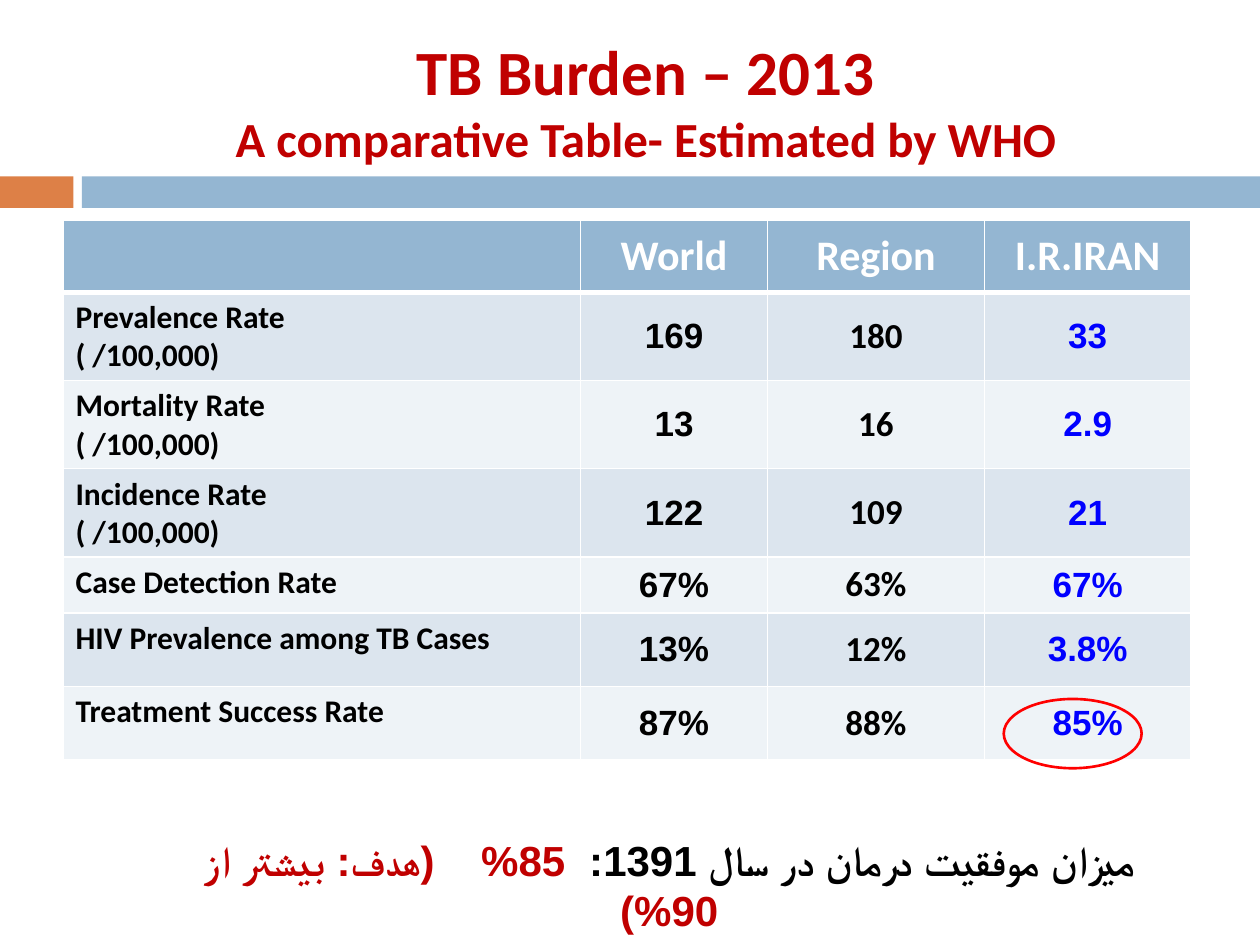
from dataclasses import dataclass

from pptx import Presentation
from pptx import util as u
from pptx.dml import color
from pptx.enum import shapes, text
from pptx.oxml import ns, xmlchemy

Pt = u.Pt
CENTER = text.PP_ALIGN.CENTER
LEFT = text.PP_ALIGN.LEFT
MIDDLE = text.MSO_ANCHOR.MIDDLE
TOP = text.MSO_ANCHOR.TOP


@dataclass(frozen=True)
class Theme:
    blue: str = "94B6D2"
    orange: str = "DD8047"
    red: str = "C00000"
    mark: str = "FF0000"
    highlight: str = "0000FF"
    black: str = "000000"
    white: str = "FFFFFF"
    bands: tuple = ("DCE5EE", "EEF3F7")
    heading_font: str = "Calibri"
    figure_font: str = "Arial"
    title: int = 36
    subtitle: int = 28
    header: int = 24
    figure: int = 20
    label: int = 18


class SlideBuilder:
    def __init__(self, slide, theme):
        self.slide = slide
        self.theme = theme

    def rgb(self, value):
        return color.RGBColor.from_string(value)

    def run(self, paragraph, words, font, size, ink, spacing=0):
        run = paragraph.add_run()
        run.text = words
        run.font.name = font
        run.font.size = Pt(size)
        run.font.bold = True
        run.font.color.rgb = self.rgb(ink)
        properties = run.font._element
        complex_font = xmlchemy.OxmlElement("a:cs")
        complex_font.set("typeface", font)
        properties.append(complex_font)
        if spacing:
            properties.set("spc", str(spacing * 100))

    def shape(self, kind, box, fill=None, line=None):
        shape = self.slide.shapes.add_shape(kind, *map(Pt, box))
        shape.shadow.inherit = False
        if fill:
            shape.fill.solid()
            shape.fill.fore_color.rgb = self.rgb(fill)
        else:
            shape.fill.background()
        if line:
            shape.line.color.rgb = self.rgb(line)
            shape.line.width = Pt(1.5)
        else:
            shape.line.fill.background()

    def text_box(self, box, anchor, top_margin=3.6):
        frame = self.slide.shapes.add_textbox(*map(Pt, box)).text_frame
        frame.word_wrap = True
        frame.vertical_anchor = anchor
        frame.margin_top = Pt(top_margin)
        paragraph = frame.paragraphs[0]
        paragraph.alignment = CENTER
        paragraph._p.get_or_add_pPr().set("rtl", "1")
        return paragraph

    def border(self, cell, side, width):
        line = xmlchemy.OxmlElement(f"a:ln{side}")
        line.set("w", str(Pt(width)))
        fill = xmlchemy.OxmlElement("a:solidFill")
        ink = xmlchemy.OxmlElement("a:srgbClr")
        ink.set("val", self.theme.white)
        fill.append(ink)
        line.append(fill)
        cell._tc.get_or_add_tcPr().append(line)

    def cell(self, cell, words, row, column):
        theme = self.theme
        for side in "LRTB":
            self.border(cell, side, 3 if row == 0 and side == "B" else 1)
        cell.fill.solid()
        cell.fill.fore_color.rgb = self.rgb(theme.bands[(row - 1) % 2] if row else theme.blue)
        is_label = row > 0 and column == 0
        cell.vertical_anchor = TOP if is_label else MIDDLE
        if row == 0:
            style = theme.heading_font, theme.header, theme.white
        elif is_label:
            style = theme.heading_font, theme.label, theme.black
        else:
            style = (
                theme.heading_font if column == 2 else theme.figure_font,
                theme.figure,
                theme.highlight if column == 3 else theme.black,
            )
        frame = cell.text_frame
        for index, line in enumerate(words.split("\n")):
            paragraph = frame.add_paragraph() if index else frame.paragraphs[0]
            paragraph.alignment = LEFT if is_label else CENTER
            if line:
                self.run(paragraph, line, *style)

    def table(self, left, top, widths, heights, rows):
        table = self.slide.shapes.add_table(
            len(heights), len(widths), Pt(left), Pt(top), Pt(sum(widths)), Pt(sum(heights))
        ).table
        for column, width in zip(table.columns, widths):
            column.width = Pt(width)
        for row, height in zip(table.rows, heights):
            row.height = Pt(height)
        for row, values in enumerate(rows):
            for column, words in enumerate(values):
                self.cell(table.cell(row, column), words, row, column)


def main():
    theme = Theme()
    presentation = Presentation()
    presentation.slide_width = Pt(720)
    presentation.slide_height = Pt(540)
    slide = presentation.slides.add_slide(presentation.slide_layouts[6])
    builder = SlideBuilder(slide, theme)

    rectangle = shapes.MSO_SHAPE.RECTANGLE
    builder.shape(rectangle, (0, 100.8, 42, 18), theme.orange)
    builder.shape(rectangle, (46.8, 100.8, 673.2, 18), theme.blue)

    title = builder.text_box((48, 18, 642, 78), MIDDLE)
    builder.run(title, "TB Burden – 2013", theme.heading_font, theme.title, theme.red)
    title.add_line_break()
    builder.run(title, "A comparative Table- Estimated by WHO",
                theme.heading_font, theme.subtitle, theme.red)

    per_population = "\n( /100,000)"
    builder.table(
        36, 126, (295.8, 106.8, 124, 118), (41, 48, 48, 48, 32, 42, 42),
        (
            ("", "World", "Region", "I.R.IRAN"),
            ("Prevalence Rate" + per_population, "169", "180", "33"),
            ("Mortality Rate" + per_population, "13", "16", "2.9"),
            ("Incidence Rate" + per_population, "122", "109", "21"),
            ("Case Detection Rate", "67%", "63%", "67%"),
            ("HIV Prevalence among TB Cases", "13%", "12%", "3.8%"),
            ("Treatment Success Rate", "87%", "88%", "85%"),
        ),
    )
    builder.shape(shapes.MSO_SHAPE.OVAL, (573.6, 399.4, 78.8, 39.6), line=theme.mark)

    summary = builder.text_box((78.6, 445.6, 607.6, 94.4), TOP, top_margin=31)
    for words, ink, spacing in (
        ("ميزان موفقيت درمان در سال 1391:", theme.black, 0),
        (" ", theme.black, 7),
        ("85%", theme.red, 0),
        (" ", theme.red, 20),
        ("(هدف: بيشتر از 90%)", theme.red, 0),
    ):
        builder.run(summary, words, theme.figure_font, theme.header, ink, spacing)

    presentation.save("out.pptx")


if __name__ == "__main__":
    main()
